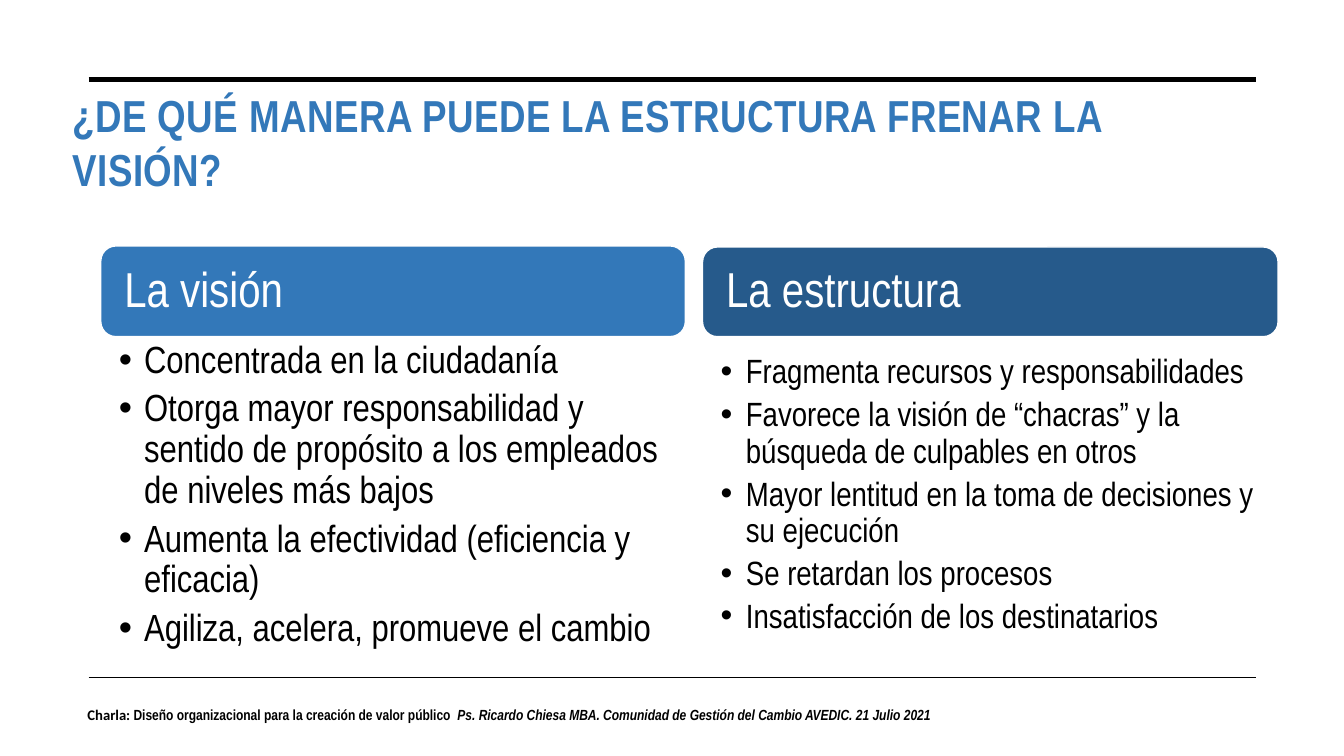
from lxml.etree import SubElement
from pptx import Presentation
from pptx.dml.color import RGBColor
from pptx.enum.shapes import MSO_CONNECTOR, MSO_SHAPE
from pptx.enum.text import MSO_ANCHOR, MSO_AUTO_SIZE, PP_ALIGN
from pptx.oxml.ns import qn
from pptx.util import Inches, Pt

WIDTH, HEIGHT = Inches(13.33), Inches(7.5)
COLUMNS, ROWS = 40, 30
BLACK = RGBColor(0x00, 0x00, 0x00)
WHITE = RGBColor(0xFF, 0xFF, 0xFF)
BLUE = RGBColor(0x33, 0x78, 0xB9)
NAVY = RGBColor(0x26, 0x5A, 0x8B)
NARROW = "Arial Narrow"
RULE_LEFT, RULE_RIGHT = 2.64, 37.38

VISION = [
    "Concentrada en la ciudadanía",
    "Otorga mayor responsabilidad y sentido de propósito a los empleados de niveles más bajos",
    "Aumenta la efectividad (eficiencia y eficacia)",
    "Agiliza, acelera, promueve el cambio",
]
STRUCTURE = [
    "Fragmenta recursos y responsabilidades",
    "Favorece la visión de “chacras” y la búsqueda de culpables en otros",
    "Mayor lentitud en la toma de decisiones y su ejecución",
    "Se retardan los procesos",
    "Insatisfacción de los destinatarios",
]


def col(n):
    return round(WIDTH * n / COLUMNS)


def row(n):
    return round(HEIGHT * n / ROWS)


def box(left, top, width, height):
    return col(left), row(top), col(width), row(height)


def place(sp, left, top, width, height):
    sp.left, sp.top, sp.width, sp.height = box(left, top, width, height)


def add_run(p, text, size, color, font=NARROW, bold=False, italic=False):
    r = p.add_run()
    r.text = text
    r.font.size, r.font.name = Pt(size), font
    r.font.bold, r.font.italic = bold, italic
    r.font.color.rgb = color
    return r


def set_frame(tf, anchor, left=0.1, right=0.1, vertical=0.05):
    tf.word_wrap = True
    tf.auto_size = MSO_AUTO_SIZE.NONE
    tf.vertical_anchor = anchor
    tf.margin_left, tf.margin_right = Inches(left), Inches(right)
    tf.margin_top = tf.margin_bottom = Inches(vertical)


def add_rule(s, y, weight):
    line = s.shapes.add_connector(
        MSO_CONNECTOR.STRAIGHT, col(RULE_LEFT), row(y), col(RULE_RIGHT), row(y))
    line.line.color.rgb = BLACK
    line.line.width = Pt(weight)
    SubElement(line._element.spPr, qn("a:effectLst"))


def add_title(s, text):
    sp = s.shapes.title
    place(sp, 1.86, 3.16, 35.07, 4.92)
    set_frame(sp.text_frame, MSO_ANCHOR.MIDDLE)
    p = sp.text_frame.paragraphs[0]
    p.alignment = PP_ALIGN.LEFT
    r = add_run(p, text, 32, BLUE, bold=True)
    r.font._element.set("spc", "30")


def add_header(s, text, fill, bounds):
    sp = s.shapes.add_shape(MSO_SHAPE.ROUNDED_RECTANGLE, *box(*bounds))
    sp.shadow.inherit = False
    sp.fill.solid()
    sp.fill.fore_color.rgb = fill
    sp.line.color.rgb = WHITE
    sp.line.width = Pt(1)
    set_frame(sp.text_frame, MSO_ANCHOR.MIDDLE, 0.19, 0.19, 0.15)
    p = sp.text_frame.paragraphs[0]
    p.alignment = PP_ALIGN.LEFT
    p.line_spacing = 0.9
    add_run(p, text, 35, WHITE)


def fill_list(sp, items, size, right, bounds):
    place(sp, *bounds)
    tf = sp.text_frame
    set_frame(tf, MSO_ANCHOR.TOP, 0.18, right)
    for i, item in enumerate(items):
        p = tf.add_paragraph() if i else tf.paragraphs[0]
        p.line_spacing = 0.9
        p.space_before, p.space_after = Pt(0), Pt(size * 0.2)
        pPr = p._p.get_or_add_pPr()
        pPr.set("marL", str(Inches(0.25)))
        pPr.set("indent", str(Inches(-0.25)))
        add_run(p, item, size, BLACK)


def add_footer(s):
    sp = s.shapes.add_textbox(*box(2.31, 27.8, 28.59, 1.88))
    set_frame(sp.text_frame, MSO_ANCHOR.TOP)
    p = sp.text_frame.paragraphs[0]
    add_run(p, "Charla: ", 10.5, BLACK, font="Calibri", bold=True)
    add_run(p, "Diseño organizacional para la creación de valor público  ",
            10.5, BLACK, bold=True)
    add_run(p, "Ps. Ricardo Chiesa MBA. Comunidad de Gestión del Cambio AVEDIC. 21 Julio 2021",
            10.5, BLACK, bold=True, italic=True)


def main():
    prs = Presentation()
    prs.slide_width, prs.slide_height = WIDTH, HEIGHT
    s = prs.slides.add_slide(prs.slide_layouts.get_by_name("Two Content"))
    add_rule(s, 3.16, 3.5)
    add_rule(s, 26.88, 1)
    add_footer(s)
    add_title(s, "¿DE QUÉ MANERA PUEDE LA ESTRUCTURA FRENAR LA VISIÓN?")
    add_header(s, "La visión", BLUE, (3, 9.76, 17.4, 3.6))
    fill_list(s.placeholders[1], VISION, 27, 0.27, (3, 13.32, 17.4, 12.36))
    add_header(s, "La estructura", NAVY, (20.91, 9.8, 17.13, 3.56))
    fill_list(s.placeholders[2], STRUCTURE, 24, 0.24, (20.91, 13.88, 17.13, 11.24))
    prs.save("out.pptx")


if __name__ == "__main__":
    main()
